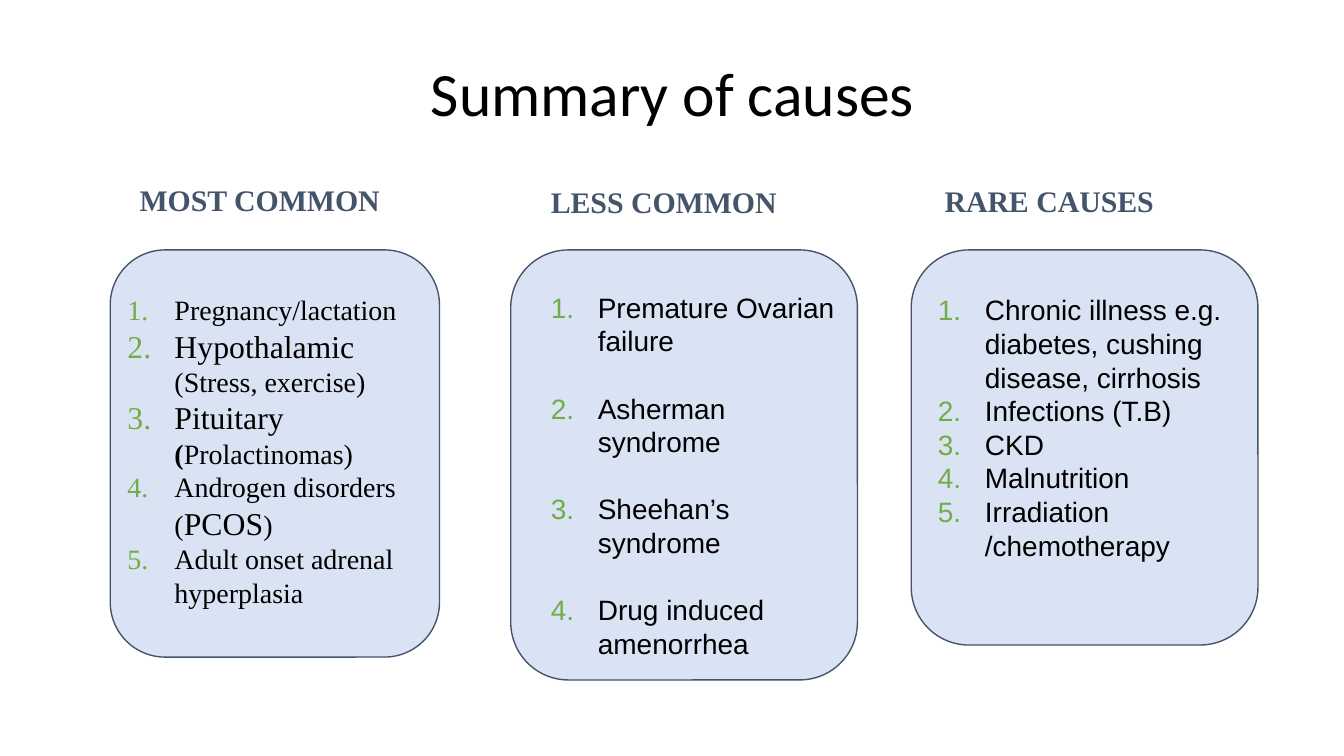
"""Build the three-column slide that sums up causes by frequency."""
from lxml.etree import SubElement
from pptx import Presentation
from pptx.dml.color import RGBColor
from pptx.enum.shapes import MSO_SHAPE
from pptx.enum.text import MSO_ANCHOR, MSO_AUTO_SIZE, PP_ALIGN
from pptx.oxml.ns import qn
from pptx.util import Pt

BLACK = RGBColor(0x00, 0x00, 0x00)
SLATE = RGBColor(0x44, 0x54, 0x6A)
PALE_BLUE = RGBColor(0xDA, 0xE3, 0xF3)
GREEN = RGBColor(0x70, 0xAD, 0x47)

SERIF, SANS = "Times New Roman", "Arial"
SMALL = {"size": Pt(15), "bold": False}
LARGE = {"size": Pt(17), "bold": False}
STRONG = {"size": Pt(15), "bold": True}
HEADING = {"size": Pt(16), "bold": True}
TITLE = {"size": Pt(33), "bold": False}

TITLE_BOX = (56.88, 28.8, 606.96, 45.36)
CARD_TOP = 133.92
INSET = 7.2
INDENT, HANGING = 36, 25.2

COLUMNS = [
    {
        "heading": "MOST COMMON", "heading_box": (67.68, 90, 172.8, 33.84),
        "card": (59.04, 176.4, 218.16),
        "list_box": (50.4, 149.76, 188, 185.04), "font": SERIF, "gap": 0,
        "items": [
            [("Pregnancy/lactation", SMALL)],
            [("Hypothalamic ", LARGE), ("(Stress, exercise)", SMALL)],
            [("Pituitary ", LARGE), ("(", STRONG), ("Prolactinomas)", SMALL)],
            [("Androgen disorders (", SMALL), ("PCOS", LARGE), (")", SMALL)],
            [("Adult onset adrenal hyperplasia", SMALL)],
        ],
    },
    {
        "heading": "LESS COMMON", "heading_box": (288, 91.44, 163.44, 33.84),
        "card": (273.6, 185.76, 230.4),
        "list_box": (277.2, 148.32, 178.56, 177.84), "font": SANS, "gap": 18,
        "items": [
            [("Premature Ovarian failure", SMALL)],
            [("Asherman syndrome", SMALL)],
            [("Sheehan’s syndrome", SMALL)],
            [("Drug induced amenorrhea", SMALL)],
        ],
    },
    {
        "heading": "RARE CAUSES", "heading_box": (498.96, 90.72, 163.44, 33.84),
        "card": (488.16, 185.76, 211.68),
        "list_box": (484.56, 149.76, 185.76, 159.84), "font": SANS, "gap": 0,
        "items": [
            [("Chronic illness e.g. diabetes, cushing disease, cirrhosis", SMALL)],
            [("Infections (T.B)", SMALL)],
            [("CKD", SMALL)],
            [("Malnutrition", SMALL)],
            [("Irradiation /chemotherapy", SMALL)],
        ],
    },
]


def points(box):
    return [Pt(v) for v in box]


def set_frame(tf, auto_size):
    tf.word_wrap = True
    tf.auto_size = auto_size
    for side in ("left", "top", "right", "bottom"):
        setattr(tf, f"margin_{side}", Pt(INSET))


def add_run(p, text, style, name, color):
    r = p.add_run()
    r.text = text
    for key, value in {**style, "name": name}.items():
        setattr(r.font, key, value)
    r.font.color.rgb = color


def add_text_box(s, box):
    tf = s.shapes.add_textbox(*points(box)).text_frame
    set_frame(tf, MSO_AUTO_SIZE.SHAPE_TO_FIT_TEXT)
    return tf


def number(p):
    pPr = p._p.get_or_add_pPr()
    pPr.set("marL", str(Pt(INDENT)))
    pPr.set("indent", str(-Pt(HANGING)))
    color = SubElement(pPr, qn("a:buClr"))
    SubElement(color, qn("a:srgbClr"), val=str(GREEN))
    SubElement(pPr, qn("a:buAutoNum"), type="arabicPeriod")


def add_title(s, text):
    sp = s.shapes.title
    sp.left, sp.top, sp.width, sp.height = points(TITLE_BOX)
    tf = sp.text_frame
    set_frame(tf, MSO_AUTO_SIZE.NONE)
    tf.vertical_anchor = MSO_ANCHOR.MIDDLE
    p = tf.paragraphs[0]
    p.alignment = PP_ALIGN.CENTER
    p.line_spacing = 0.9
    add_run(p, text, TITLE, "Calibri", BLACK)


def add_card(s, left, width, height):
    box = points((left, CARD_TOP, width, height))
    sp = s.shapes.add_shape(MSO_SHAPE.ROUNDED_RECTANGLE, *box)
    sp.shadow.inherit = False
    sp.fill.solid()
    sp.fill.fore_color.rgb = PALE_BLUE
    sp.line.color.rgb = SLATE
    sp.line.width = Pt(0.75)


def add_list(s, column):
    tf = add_text_box(s, column["list_box"])
    for i, item in enumerate(column["items"]):
        p = tf.add_paragraph() if i else tf.paragraphs[0]
        number(p)
        if i and column["gap"]:
            p.space_before = Pt(column["gap"])
        for text, style in item:
            add_run(p, text, style, column["font"], BLACK)


def main():
    prs = Presentation()
    prs.slide_width, prs.slide_height = Pt(720), Pt(405)
    s = prs.slides.add_slide(prs.slide_layouts[5])
    add_title(s, "Summary of causes")
    for column in COLUMNS:
        add_card(s, *column["card"])
        p = add_text_box(s, column["heading_box"]).paragraphs[0]
        add_run(p, column["heading"], HEADING, SERIF, SLATE)
        add_list(s, column)
    prs.save("out.pptx")


if __name__ == "__main__":
    main()
